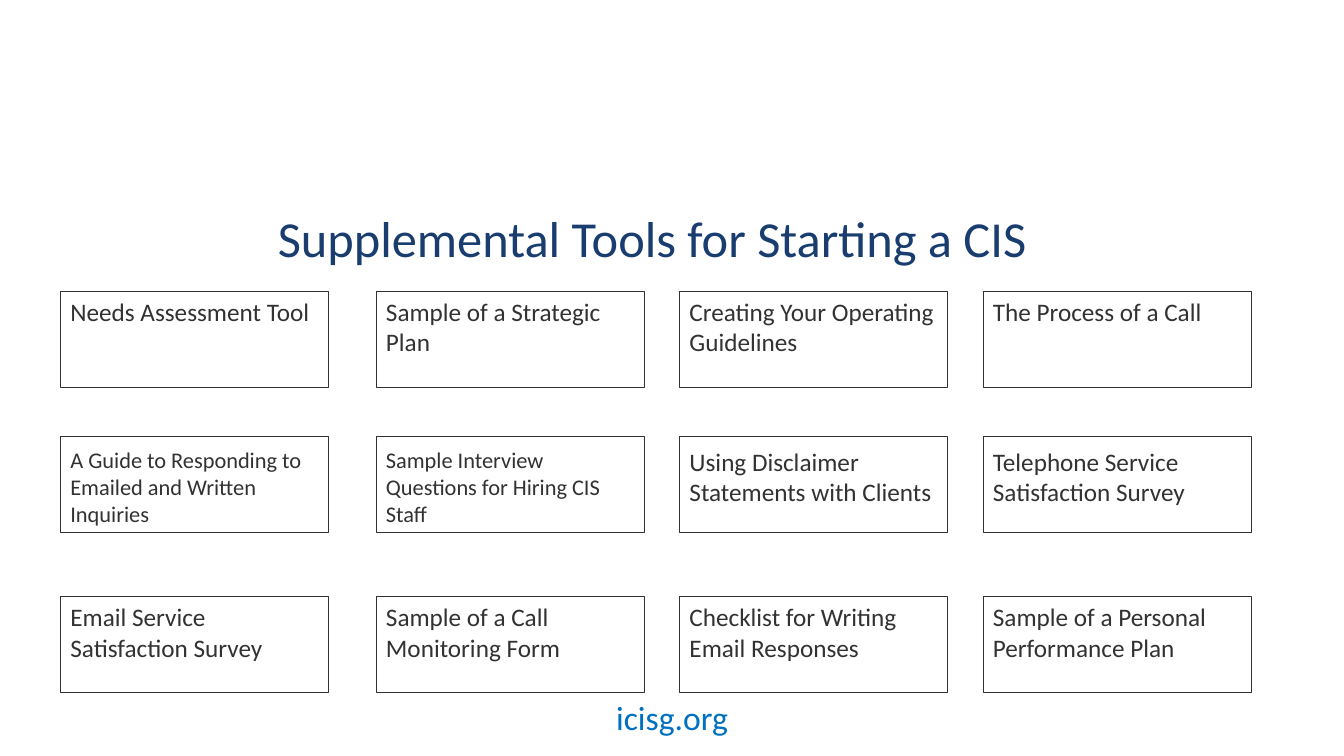
from pptx import Presentation
from pptx.dml.color import RGBColor
from pptx.enum.shapes import MSO_SHAPE
from pptx.enum.text import MSO_ANCHOR, MSO_AUTO_SIZE, PP_ALIGN
from pptx.util import Emu, Pt

PX = 9144  # 100 px to the inch


def px(*lengths):
    return [Emu(n * PX) for n in lengths]


def color(value):
    return RGBColor.from_string(value)


def write(tf, text, size=18, fill="323232", font="Calibri", align=PP_ALIGN.LEFT,
          anchor=MSO_ANCHOR.TOP, spacing=None, fit=MSO_AUTO_SIZE.NONE):
    tf.word_wrap = True
    tf.auto_size = fit
    tf.vertical_anchor = anchor
    p = tf.paragraphs[0]
    p.alignment = align
    p.line_spacing = spacing
    r = p.add_run()
    r.text = text
    r.font.name = font
    r.font.size = Pt(size)
    r.font.color.rgb = color(fill)


class ToolSlide:
    ink = "323232"
    title_color = "193D6F"
    link_color = "0070C0"

    def __init__(self, prs):
        self.s = prs.slides.add_slide(prs.slide_layouts[5])

    def title(self, text, *box):
        sp = self.s.shapes.title
        sp.left, sp.top, sp.width, sp.height = px(*box)
        write(sp.text_frame, text, size=36, fill=self.title_color,
              align=PP_ALIGN.CENTER, anchor=MSO_ANCHOR.BOTTOM, spacing=0.9)

    def frame(self, *box):
        sp = self.s.shapes.add_shape(MSO_SHAPE.RECTANGLE, *px(*box))
        sp.shadow.inherit = False
        sp.fill.background()
        sp.line.color.rgb = color(self.ink)
        sp.line.width = Pt(0.5)

    def text(self, text, *box, **style):
        sp = self.s.shapes.add_textbox(*px(*box))
        write(sp.text_frame, text, **style)


COLUMNS = [60, 373, 674, 975]
# Frame top, text top, tool names from left to right
ROWS = [
    (289, 289, ["Needs Assessment Tool", "Sample of a Strategic Plan",
                "Creating Your Operating Guidelines", "The Process of a Call"]),
    (433, 438, ["A Guide to Responding to Emailed and Written Inquiries",
                "Sample Interview Questions for Hiring CIS Staff",
                "Using Disclaimer Statements with Clients",
                "Telephone Service Satisfaction Survey"]),
    (592, 592, ["Email Service Satisfaction Survey", "Sample of a Call Monitoring Form",
                "Checklist for Writing Email Responses",
                "Sample of a Personal Performance Plan"]),
]
THREE_LINES = {ROWS[1][2][0], ROWS[1][2][1]}
ONE_LINE = {ROWS[0][2][0], ROWS[0][2][3]}


def main():
    prs = Presentation()
    prs.slide_width, prs.slide_height = px(1333, 750)
    slide = ToolSlide(prs)

    # Title and web address
    slide.title("Supplemental Tools for Starting a CIS", 53, 210, 1188, 61)
    slide.text("icisg.org", 14, 685, 1305, 52, size=24, fill=slide.link_color,
               align=PP_ALIGN.CENTER, anchor=MSO_ANCHOR.MIDDLE)

    # Grid of tools
    for frame_top, text_top, tools in ROWS:
        for left, tool in zip(COLUMNS, tools):
            slide.frame(left, frame_top, 266, 95)
            size = 16 if tool in THREE_LINES else 18
            height = 91 if tool in THREE_LINES else 40 if tool in ONE_LINE else 71
            slide.text(tool, left, text_top, 266, height, size=size,
                       fill=slide.ink, fit=MSO_AUTO_SIZE.SHAPE_TO_FIT_TEXT)

    prs.save("out.pptx")


if __name__ == "__main__":
    main()
